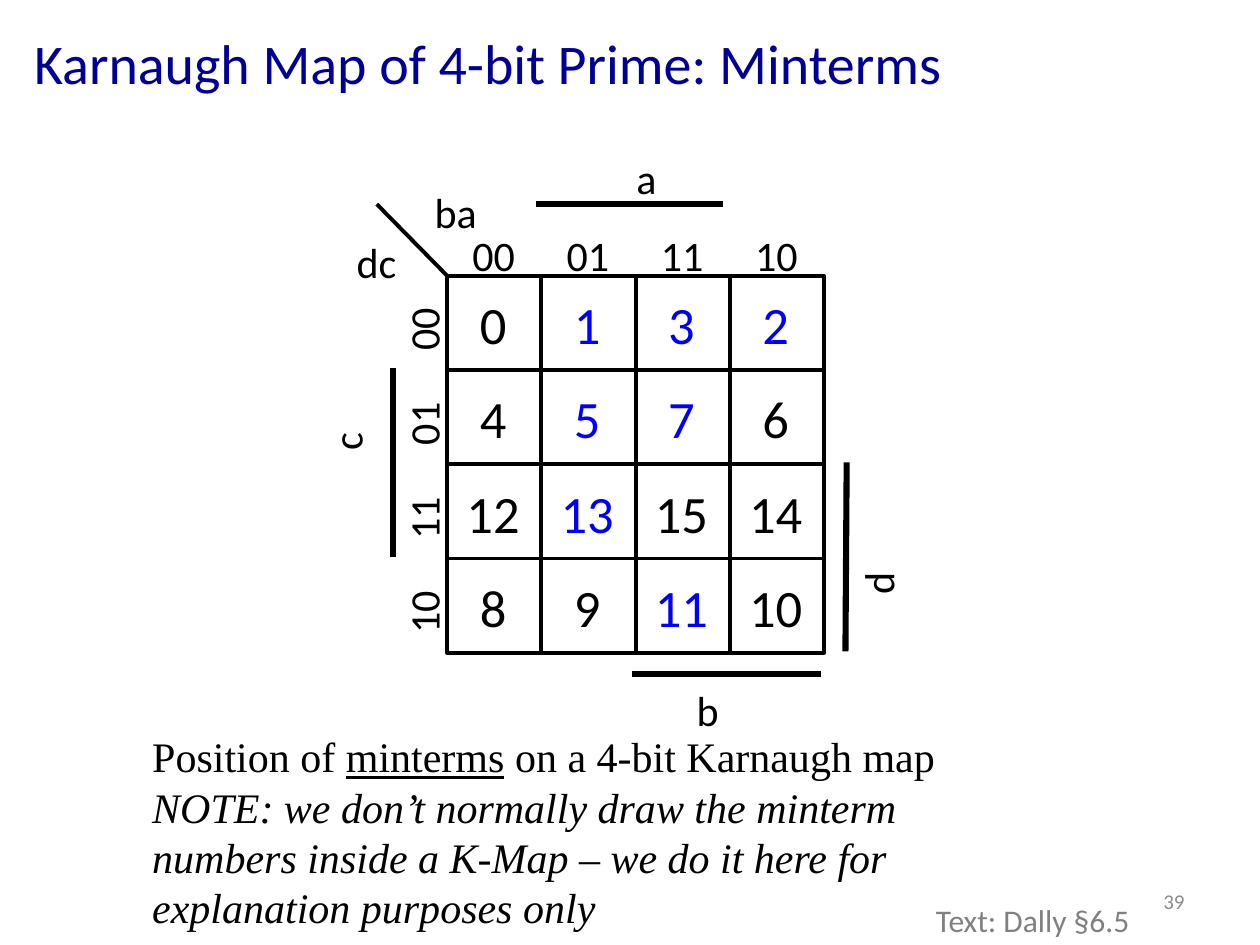
from lxml.etree import SubElement
from pptx import Presentation
from pptx.dml.color import RGBColor
from pptx.enum.shapes import MSO_CONNECTOR as Connector, MSO_SHAPE as Shape
from pptx.enum.text import MSO_ANCHOR as Anchor, PP_ALIGN as Align
from pptx.oxml.ns import qn
from pptx.util import Inches, Pt

# Content
TITLE = "Karnaugh Map of 4-bit Prime: Minterms"
GRAY_CODES = ["00", "01", "11", "10"]
MINTERMS = [
    [0, 1, 3, 2],
    [4, 5, 7, 6],
    [12, 13, 15, 14],
    [8, 9, 11, 10],
]
PRIMES = {1, 2, 3, 5, 7, 11, 13}
NOTE = [
    "NOTE: we don’t normally draw the minterm",
    "numbers inside a K-Map – we do it here for",
    "explanation purposes only",
]
COLORS = {"black": "000000", "prime": "0000FF", "title": "000099",
          "source": "808080", "number": "8C8C8C"}

# Variable names: text, left, top, width, rotation
VARIABLES = [
    ("ba", 3.45, 1.48, 0.37, 0),
    ("dc", 2.83, 1.88, 0.35, 0),
    ("a", 5.05, 1.21, 0.19, 0),
    ("b", 5.53, 5.43, 0.37, 0),
    ("c", 2.66, 3.29, 0.17, 270),
    ("d", 6.78, 4.33, 0.37, 270),
]
# Lines: start, end, weight
LINES = [
    ((3.55, 2.19), (2.99, 1.62), 2.25),  # corner between ba and dc
    ((4.25, 1.62), (5.74, 1.62), 3.5),   # a
    ((5.02, 5.35), (6.52, 5.35), 3.5),   # b
    ((3.12, 4.42), (3.12, 2.92), 3.5),   # c
    ((6.71, 5.17), (6.72, 3.67), 3.5),   # d
]
GRID_LEFT, GRID_TOP, GRID_SIZE = 3.55, 2.19, 2.99
CELL = GRID_SIZE / len(GRAY_CODES)


def color(name):
    return RGBColor.from_string(COLORS[name])


def style(para, size, name="black", font="Calibri", align=Align.LEFT):
    para.alignment = align
    para.font.name = font
    para.font.size = Pt(size)
    para.font.color.rgb = color(name)


def add_box(left, top, width, height, margins=True):
    box = slide.shapes.add_textbox(Inches(left), Inches(top), Inches(width), Inches(height))
    frame = box.text_frame
    frame.word_wrap = True
    if not margins:
        frame.margin_left = frame.margin_right = 0
        frame.margin_top = frame.margin_bottom = 0
    return box


def add_label(text, left, top, width, rotation=0, size=24, name="black", align=Align.LEFT):
    box = add_box(left, top, width, size / 60, margins=False)
    box.rotation = rotation
    box.text_frame.text = text
    style(box.text_frame.paragraphs[0], size, name, align=align)


def add_cell(left, top, minterm):
    cell = slide.shapes.add_shape(Shape.RECTANGLE, Inches(left), Inches(top),
                                  Inches(CELL), Inches(CELL))
    cell.shadow.inherit = False
    cell.fill.background()
    cell.line.color.rgb = color("black")
    cell.line.width = Pt(2.25)
    text = str(minterm)
    width = 0.23 * len(text)
    add_label(text, left + (CELL - width) / 2 - 0.01, top + 0.13, width, size=30,
              name="prime" if minterm in PRIMES else "black", align=Align.CENTER)


def add_line(start, end, weight):
    line = slide.shapes.add_connector(Connector.STRAIGHT, *map(Inches, start + end))
    line.line.color.rgb = color("black")
    line.line.width = Pt(weight)
    SubElement(line._element.spPr, qn("a:effectLst"))


deck = Presentation()
deck.slide_width, deck.slide_height = Inches(10), Inches(7.5)
slide = deck.slides.add_slide(deck.slide_layouts[5])

# Title
title = slide.shapes.title
title.left, title.top, title.width, title.height = map(Inches, (0.17, 0, 8.5, 0.98))
title.text_frame.text = TITLE
title.text_frame.vertical_anchor = Anchor.MIDDLE
style(title.text_frame.paragraphs[0], 32, "title")

# Map cells with their minterm numbers
for row, minterms in enumerate(MINTERMS):
    for column, minterm in enumerate(minterms):
        add_cell(GRID_LEFT + column * CELL, GRID_TOP + row * CELL, minterm)

# Gray codes along both edges, variable names and lines
for index, code in enumerate(GRAY_CODES):
    add_label(code, GRID_LEFT + index * CELL + 0.2, 1.82, 0.37)
    add_label(code, 3.17, GRID_TOP + index * CELL + 0.21, 0.37, rotation=270)
for variable in VARIABLES:
    add_label(*variable)
for line in LINES:
    add_line(*line)

# Explanation
frame = add_box(1.11, 5.75, 6.47, 1.72).text_frame
caption = frame.paragraphs[0]
for text in ("Position of ", "minterms", " on a 4-bit Karnaugh map"):
    span = caption.add_run()
    span.text = text
    if text == "minterms":
        span.font.underline = True
style(caption, 24, font="Times New Roman")
for text in NOTE:
    para = frame.add_paragraph()
    para.text = text
    style(para, 24, font="Times New Roman")
    para.font.italic = True

# Source and slide number
source = add_box(7.33, 7.1, 1.92, 0.4).text_frame
source.text = "Text: Dally §6.5"
style(source.paragraphs[0], 18, "source")
number = add_box(7.17, 6.95, 2.33, 0.4).text_frame
number.text = "39"
number.vertical_anchor = Anchor.MIDDLE
style(number.paragraphs[0], 12, "number", align=Align.RIGHT)

deck.save("out.pptx")
